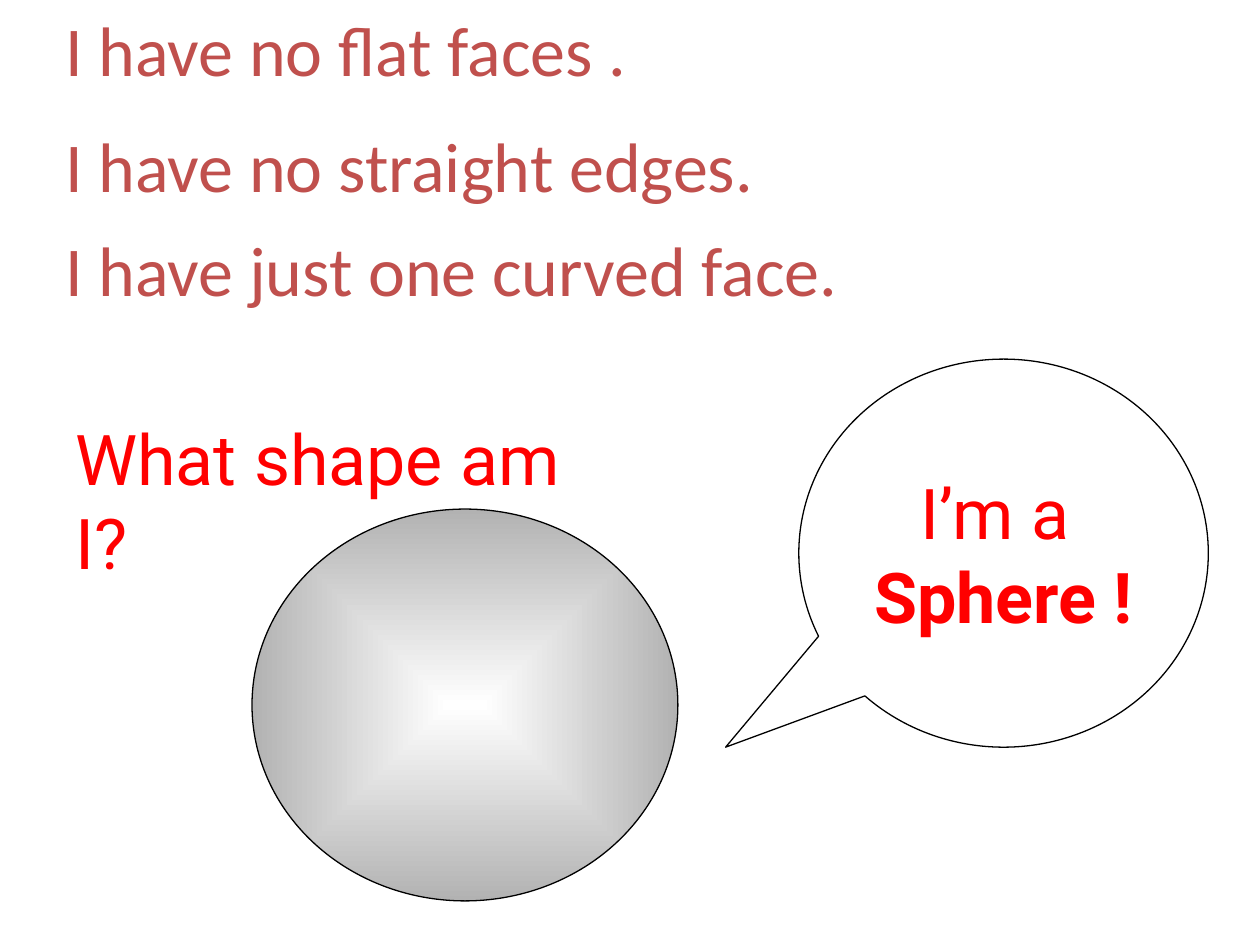
from lxml import etree
from pptx import Presentation
from pptx.dml.color import RGBColor
from pptx.enum.shapes import MSO_SHAPE as Shape
from pptx.enum.text import MSO_ANCHOR as Anchor, MSO_AUTO_SIZE as AutoSize, PP_ALIGN as Align
from pptx.oxml.ns import qn
from pptx.util import Inches, Pt

CLUE, ANSWER = "C0504D", "FF0000"


def rgb(color):
    return RGBColor.from_string(color)


def style(p, font, color):
    p.font.name = font
    p.font.size = Pt(40)
    p.font.color.rgb = rgb(color)


def add_text(s, text, left, top, width, font, color):
    box = s.shapes.add_textbox(Inches(left), Inches(top), Inches(width), Inches(0.77))
    tf = box.text_frame
    tf.word_wrap = True
    tf.auto_size = AutoSize.SHAPE_TO_FIT_TEXT
    p = tf.paragraphs[0]
    p.text = text
    style(p, font, color)


def add_outlined(s, kind, left, top, width, height):
    sp = s.shapes.add_shape(kind, Inches(left), Inches(top), Inches(width), Inches(height))
    sp.shadow.inherit = False
    sp.line.color.rgb = rgb("000000")
    sp.line.width = Pt(0.75)
    return sp


def add_clues(s, left, width):
    clues = {
        0: "I have no flat faces .",
        0.92: "I have no straight edges.",
        1.75: "I have just one curved face.",
    }
    for top, clue in clues.items():
        add_text(s, clue, left, top, width, "Calibri", CLUE)


def add_callout(s, left, top, width, height):
    sp = add_outlined(s, Shape.OVAL_CALLOUT, left, top, width, height)
    sp.adjustments[0] = -0.679
    sp.adjustments[1] = 0.5
    sp.fill.solid()
    sp.fill.fore_color.rgb = rgb("FFFFFF")
    tf = sp.text_frame
    tf.word_wrap = False
    tf.vertical_anchor = Anchor.MIDDLE
    tf.text = "I’m a \nSphere !"
    for p in tf.paragraphs:
        p.alignment = Align.CENTER
        style(p, "Roboto", ANSWER)
    tf.paragraphs[1].font.bold = True


def add_sphere(s, left, top, width, height):
    sp = add_outlined(s, Shape.OVAL, left, top, width, height)
    sp.fill.gradient()
    for stop, color in zip(sp.fill.gradient_stops, ("FFFFFF", "B2B2B2")):
        stop.color.rgb = rgb(color)
    grad = sp.fill._xPr.find(qn("a:gradFill"))
    linear = grad.find(qn("a:lin"))
    radial = etree.Element(qn("a:path"), {"path": "shape"})
    etree.SubElement(radial, qn("a:fillToRect"), dict.fromkeys("ltrb", "50000"))
    grad.replace(linear, radial)


def main():
    prs = Presentation()
    prs.slide_width, prs.slide_height = Inches(10), Inches(7.5)
    s = prs.slides.add_slide(prs.slide_layouts[6])
    add_clues(s, 0.42, 7.92)
    add_text(s, "What shape am I?", 0.5, 3.25, 4.26, "Roboto", ANSWER)
    add_callout(s, 6.34, 2.85, 3.25, 3.08)
    add_sphere(s, 2, 4.04, 3.38, 3.11)
    prs.save("out.pptx")


if __name__ == "__main__":
    main()
